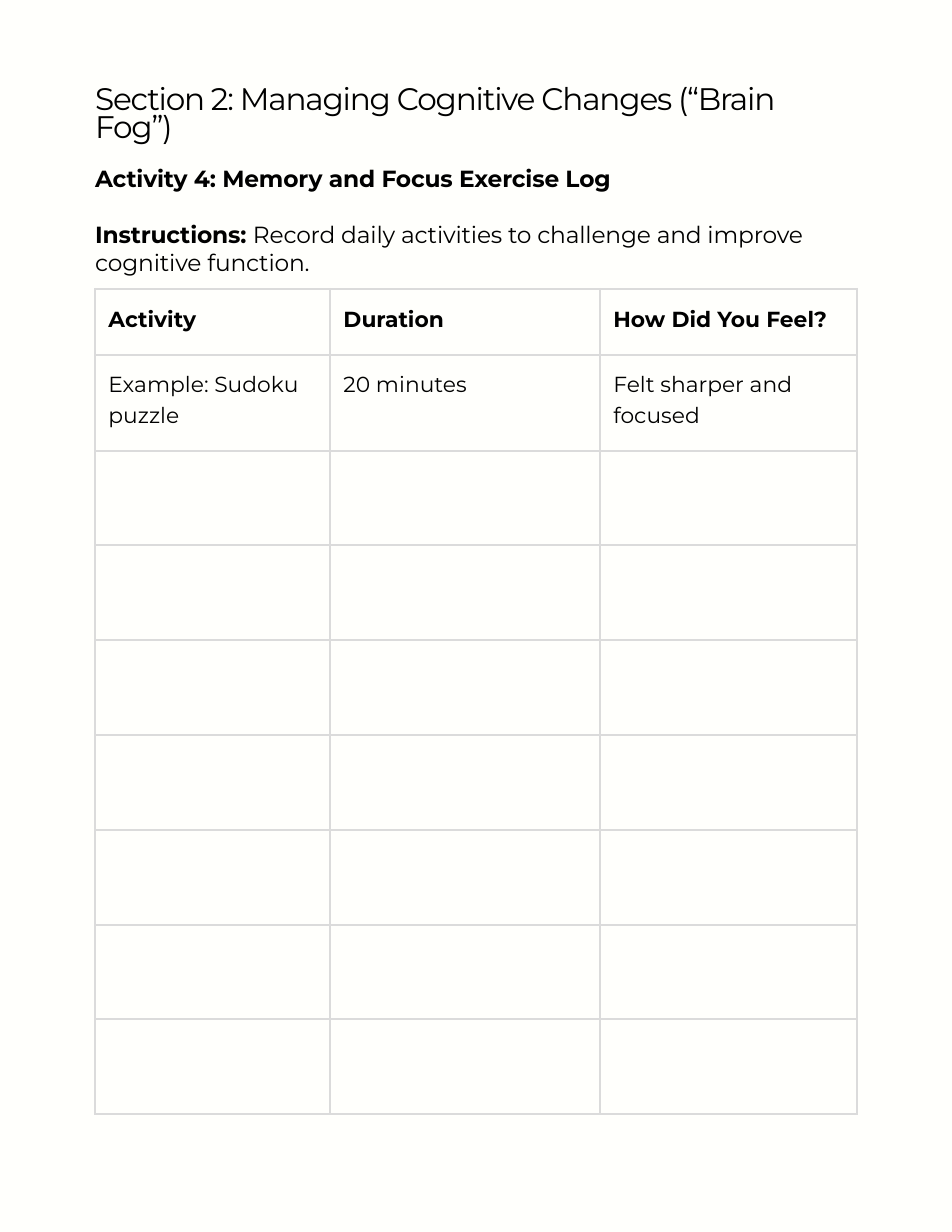
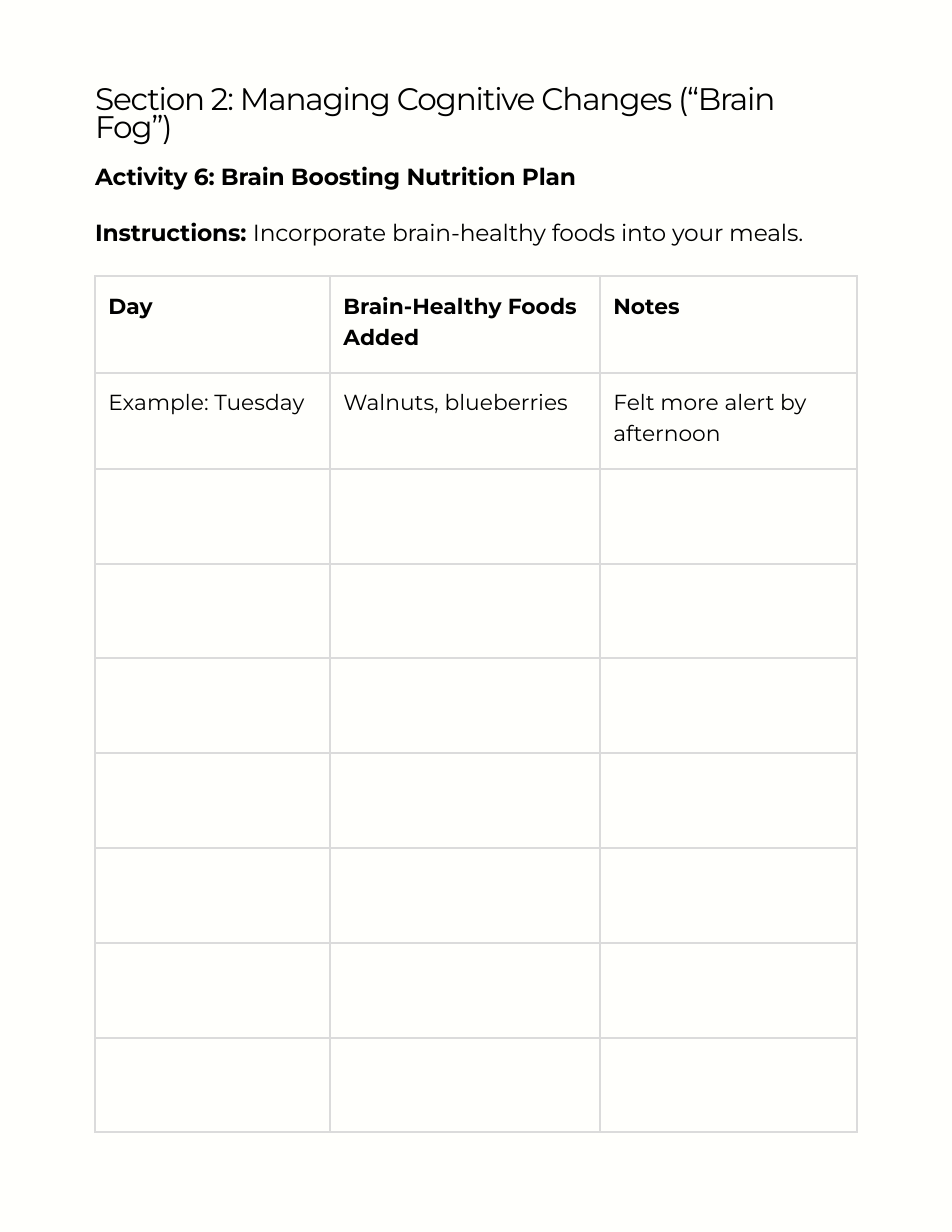
from dataclasses import dataclass

from lxml.etree import SubElement
from pptx import Presentation
from pptx.dml.color import RGBColor
from pptx.enum.text import MSO_AUTO_SIZE, MSO_ANCHOR
from pptx.oxml import parse_xml
from pptx.oxml.ns import nsdecls, qn
from pptx.util import Cm, Pt


@dataclass(frozen=True)
class Style:
    size: float
    lead: float
    track: int = 0  # hundredths of a point
    bold: bool = False


@dataclass(frozen=True)
class Theme:
    font: str = "Montserrat"
    paper: RGBColor = RGBColor(0xFF, 0xFF, 0xFC)
    ink: RGBColor = RGBColor(0, 0, 0)
    rule: str = "DBDBDB"
    rule_width: Pt = Pt(1.5)
    title: Style = Style(20, 18, -80)
    body: Style = Style(15, 18, -10)
    lead_in: Style = Style(15, 18, -10, True)
    cell: Style = Style(14, 19.6)
    head: Style = Style(14, 19.6, 0, True)


@dataclass(frozen=True)
class Page:
    activity: str
    task: str
    heads: tuple[str, ...]
    sample: tuple[str, ...]
    intro_top: Cm
    intro_height: Cm
    table_top: Cm
    head_height: Cm


THEME = Theme()
SECTION = "Section 2: Managing Cognitive Changes (“Brain Fog”)"
LEFT, WIDTH = Cm(2.16), Cm(17.27)
COLUMNS = (Cm(5.33), Cm(6.12), Cm(5.82))
SAMPLE_HEIGHT, BLANK_HEIGHT = Cm(2.18), Cm(2.15)
BLANK_ROWS = 7
PAD = Cm(0.3)

PAGES = (
    Page(
        "Activity 4: Memory and Focus Exercise Log",
        "Record daily activities to challenge and improve cognitive function.",
        ("Activity", "Duration", "How Did You Feel?"),
        ("Example: Sudoku puzzle", "20 minutes", "Felt sharper and focused"),
        Cm(3.73), Cm(2.36), Cm(6.55), Cm(1.49),
    ),
    Page(
        "Activity 6: Brain Boosting Nutrition Plan",
        "Incorporate brain-healthy foods into your meals.",
        ("Day", "Brain-Healthy Foods Added", "Notes"),
        ("Example: Tuesday", "Walnuts, blueberries", "Felt more alert by afternoon"),
        Cm(3.68), Cm(1.78), Cm(6.27), Cm(2.18),
    ),
)


def set_style(para, style: Style) -> None:
    para.line_spacing = Pt(style.lead)
    font = para.font
    font.name, font.size, font.bold = THEME.font, Pt(style.size), style.bold
    font.color.rgb = THEME.ink
    if style.track:
        para._p.pPr.find(qn("a:defRPr")).set("spc", str(style.track))


def add_box(slide, top: Cm, height: Cm):
    frame = slide.shapes.add_textbox(LEFT, top, WIDTH, height).text_frame
    frame.word_wrap = True
    frame.auto_size = MSO_AUTO_SIZE.SHAPE_TO_FIT_TEXT
    frame.margin_left = frame.margin_right = frame.margin_top = frame.margin_bottom = 0
    return frame


def add_title(slide) -> None:
    para = add_box(slide, Cm(2.01), Cm(1.3)).paragraphs[0]
    para.text = SECTION
    set_style(para, THEME.title)


def add_intro(slide, page: Page) -> None:
    frame = add_box(slide, page.intro_top, page.intro_height)
    name = frame.paragraphs[0]
    name.text = page.activity
    set_style(name, THEME.lead_in)
    guide = frame.add_paragraph()
    set_style(guide, THEME.body)
    guide.space_before = Pt(THEME.body.lead)
    for text, bold in (("Instructions: ", True), (page.task, False)):
        run = guide.add_run()
        run.text, run.font.bold = text, bold


def set_cell(cell) -> None:
    """Clear the fill, pad the cell and rule its four sides."""
    cell.fill.background()
    cell.vertical_anchor = MSO_ANCHOR.TOP
    cell.margin_left = cell.margin_right = cell.margin_top = cell.margin_bottom = PAD
    props = cell._tc.get_or_add_tcPr()
    for index, side in enumerate("LRTB"):
        line = parse_xml(f'<a:ln{side} {nsdecls("a")} w="{THEME.rule_width}"/>')
        fill = SubElement(line, qn("a:solidFill"))
        SubElement(fill, qn("a:srgbClr")).set("val", THEME.rule)
        props.insert(index, line)


def add_log(slide, page: Page) -> None:
    heights = (page.head_height, SAMPLE_HEIGHT) + (BLANK_HEIGHT,) * BLANK_ROWS
    table = slide.shapes.add_table(
        len(heights), len(COLUMNS), LEFT, page.table_top, WIDTH, sum(heights)
    ).table
    table.first_row = table.horz_banding = False
    for column, width in zip(table.columns, COLUMNS):
        column.width = width
    for row, height in zip(table.rows, heights):
        row.height = height
    for cell in table.iter_cells():
        set_cell(cell)
    for row, (texts, style) in enumerate(
        ((page.heads, THEME.head), (page.sample, THEME.cell))
    ):
        for col, text in enumerate(texts):
            para = table.cell(row, col).text_frame.paragraphs[0]
            para.text = text
            set_style(para, style)


def main() -> None:
    deck = Presentation()
    deck.slide_width, deck.slide_height = Cm(21.59), Cm(27.94)
    for page in PAGES:
        slide = deck.slides.add_slide(deck.slide_layouts[6])
        fill = slide.background.fill
        fill.solid()
        fill.fore_color.rgb = THEME.paper
        add_title(slide)
        add_intro(slide, page)
        add_log(slide, page)
    deck.save("out.pptx")


if __name__ == "__main__":
    main()
